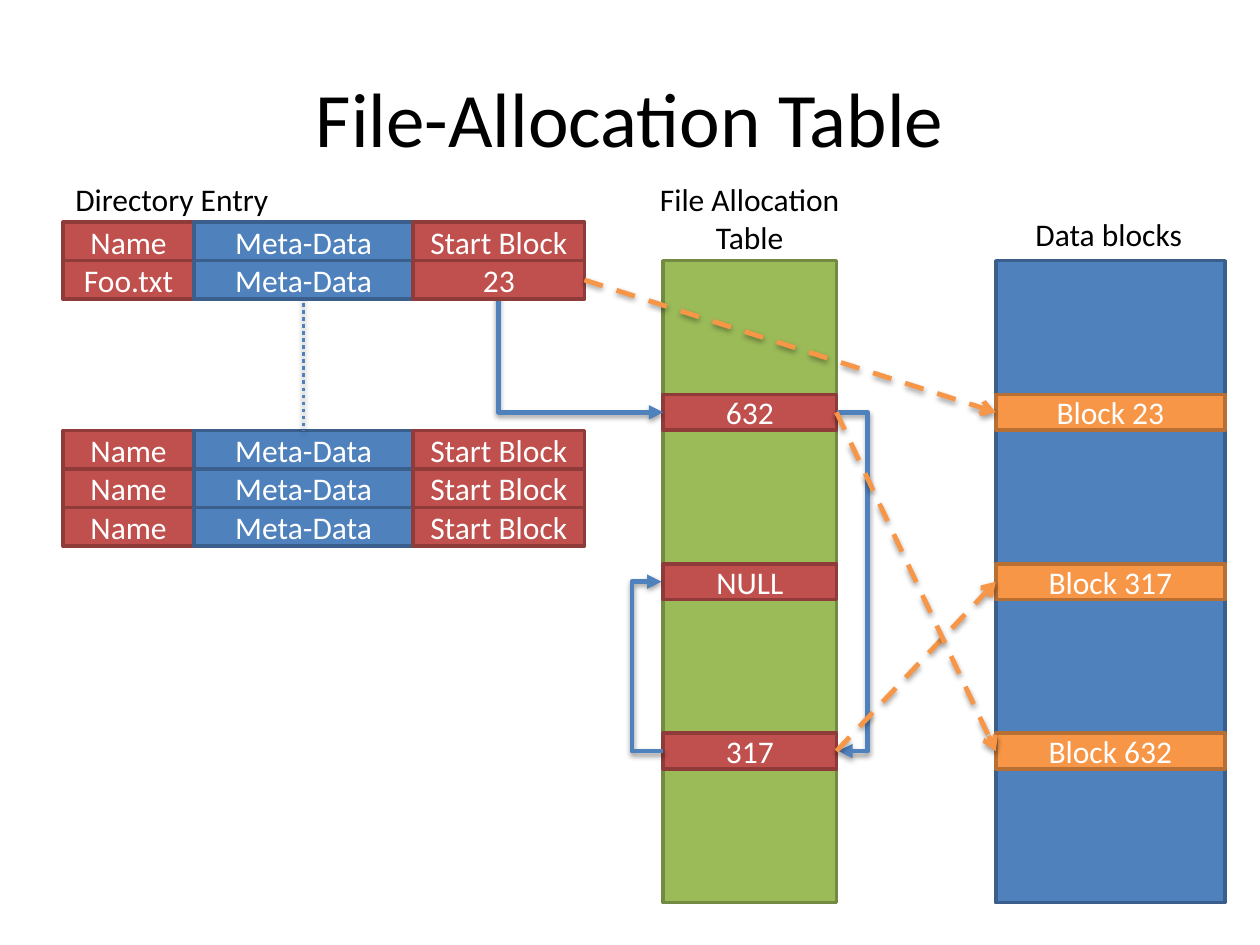
from lxml import etree
from pptx import Presentation
from pptx.dml.color import RGBColor
from pptx.enum import dml, shapes, text
from pptx.oxml import ns
from pptx.util import Pt

COLORS = {
    "red": "C0504D", "red line": "8E3B39",
    "blue": "4F81BD", "blue line": "3A5F8C",
    "green": "9BBB59", "green line": "738A42",
    "orange": "F79646", "orange line": "B76F34",
    "black": "000000", "white": "FFFFFF",
}

presentation = Presentation()
presentation.slide_width, presentation.slide_height = Pt(720), Pt(540)
slide = presentation.slides.add_slide(presentation.slide_layouts[6])


def add_box(left, top, width, height, color, label=""):
    shape = slide.shapes.add_shape(
        shapes.MSO_SHAPE.RECTANGLE, Pt(left), Pt(top), Pt(width), Pt(height))
    shape.shadow.inherit = False
    shape.fill.solid()
    shape.fill.fore_color.rgb = RGBColor.from_string(COLORS[color])
    shape.line.color.rgb = RGBColor.from_string(COLORS[color + " line"])
    shape.line.width = Pt(2)
    if label:
        shape.text_frame.text = label
        paragraph = shape.text_frame.paragraphs[0]
        paragraph.alignment = text.PP_ALIGN.CENTER
        paragraph.font.size = Pt(18)
        paragraph.font.name = "Calibri"
        paragraph.font.color.rgb = RGBColor.from_string(COLORS["white"])
    return shape


def add_link(kind, start, start_side, end, end_side, color, width, dash=None, head=None):
    connector = slide.shapes.add_connector(kind, 0, 0, 0, 0)
    connector.begin_connect(start, start_side)
    connector.end_connect(end, end_side)
    connector.line.color.rgb = RGBColor.from_string(COLORS[color])
    connector.line.width = Pt(width)
    if dash:
        connector.line.dash_style = dash
    if head:
        etree.SubElement(connector.line._get_or_add_ln(), ns.qn("a:tailEnd"), type=head)
    return connector


TABLE_TOP, PERIOD, GAP_HEIGHT = 149, 96.8, 76.4
ENTRY_HEIGHT = PERIOD - GAP_HEIGHT
stacks = []
for left, width, gap_color, entry_color, labels in [
    (379, 99, "green", "red", ["632", "NULL", "317"]),
    (569, 131, "blue", "orange", ["Block 23", "Block 317", "Block 632"]),
]:
    for index in range(4):
        add_box(left, TABLE_TOP + index * PERIOD, width, GAP_HEIGHT, gap_color)
    stacks.append([
        add_box(left, TABLE_TOP + GAP_HEIGHT + index * PERIOD, width, ENTRY_HEIGHT, entry_color, label)
        for index, label in enumerate(labels)])
entries, blocks = stacks

for left, top, width, height, size, wrap, alignment, lines in [
    (36, 21.6, 648, 90, 44, True, text.PP_ALIGN.CENTER, ["File-Allocation Table"]),
    (36, 99.4, 127, 29, 18, False, text.PP_ALIGN.LEFT, ["Directory Entry"]),
    (367.2, 99.4, 122.4, 51, 18, False, text.PP_ALIGN.CENTER, ["File Allocation", "Table"]),
    (584.6, 119.5, 99.4, 29, 18, False, text.PP_ALIGN.LEFT, ["Data blocks"]),
]:
    frame = slide.shapes.add_textbox(Pt(left), Pt(top), Pt(width), Pt(height)).text_frame
    frame.word_wrap = wrap
    frame.vertical_anchor = text.MSO_ANCHOR.MIDDLE if wrap else text.MSO_ANCHOR.TOP
    frame.text = "\n".join(lines)
    for paragraph in frame.paragraphs:
        paragraph.alignment = alignment
        paragraph.font.size = Pt(size)
        paragraph.font.name = "Calibri"
        paragraph.font.color.rgb = RGBColor.from_string(COLORS["black"])

COLUMNS = [(36, 75, "red"), (111, 125, "blue"), (236, 98, "red")]
HEADINGS = ["Name", "Meta-Data", "Start Block"]
ROW_HEIGHT = 22
ELBOW, STRAIGHT = shapes.MSO_CONNECTOR.ELBOW, shapes.MSO_CONNECTOR.STRAIGHT
directory = []
for top, labels in [
    (127, HEADINGS), (246, HEADINGS), (268, HEADINGS), (290, HEADINGS),
    (149, ["Foo.txt", "Meta-Data", "23"]),
]:
    if top == 149:
        add_link(STRAIGHT, directory[0][1], 2, directory[1][1], 0, "blue", 2, dml.MSO_LINE.ROUND_DOT)
        start_link = add_link(ELBOW, directory[0][2], 2, entries[0], 1, "blue", 2.75, head="triangle")
    directory.append([
        add_box(left, top, width, ROW_HEIGHT, color, label)
        for (left, width, color), label in zip(COLUMNS, labels)])

width, height = start_link.width, start_link.height
start_link.left += (width - height) // 2
start_link.top += (height - width) // 2
start_link.width, start_link.height = height, width
properties = start_link._element.spPr
properties.find(ns.qn("a:xfrm")).set("rot", "16200000")
properties.find(ns.qn("a:xfrm")).set("flipH", "1")
properties.find(ns.qn("a:prstGeom")).set("prst", "bentConnector2")

for start, end, side, step in [(0, 2, 3, 1), (2, 1, 1, -1)]:
    connector = add_link(ELBOW, entries[start], side, entries[end], side, "blue", 2.75, head="triangle")
    connector.end_x = connector.begin_x + Pt(step)
    adjustments = connector._element.spPr.find(ns.qn("a:prstGeom")).find(ns.qn("a:avLst"))
    etree.SubElement(adjustments, ns.qn("a:gd"), name="adj1", fmla="val 1800000")

for start, end in [(directory[-1][2], blocks[0]), (entries[2], blocks[1]), (entries[0], blocks[2])]:
    add_link(STRAIGHT, start, 3, end, 1, "orange", 2.75, dml.MSO_LINE.DASH, "arrow")

presentation.save("out.pptx")
